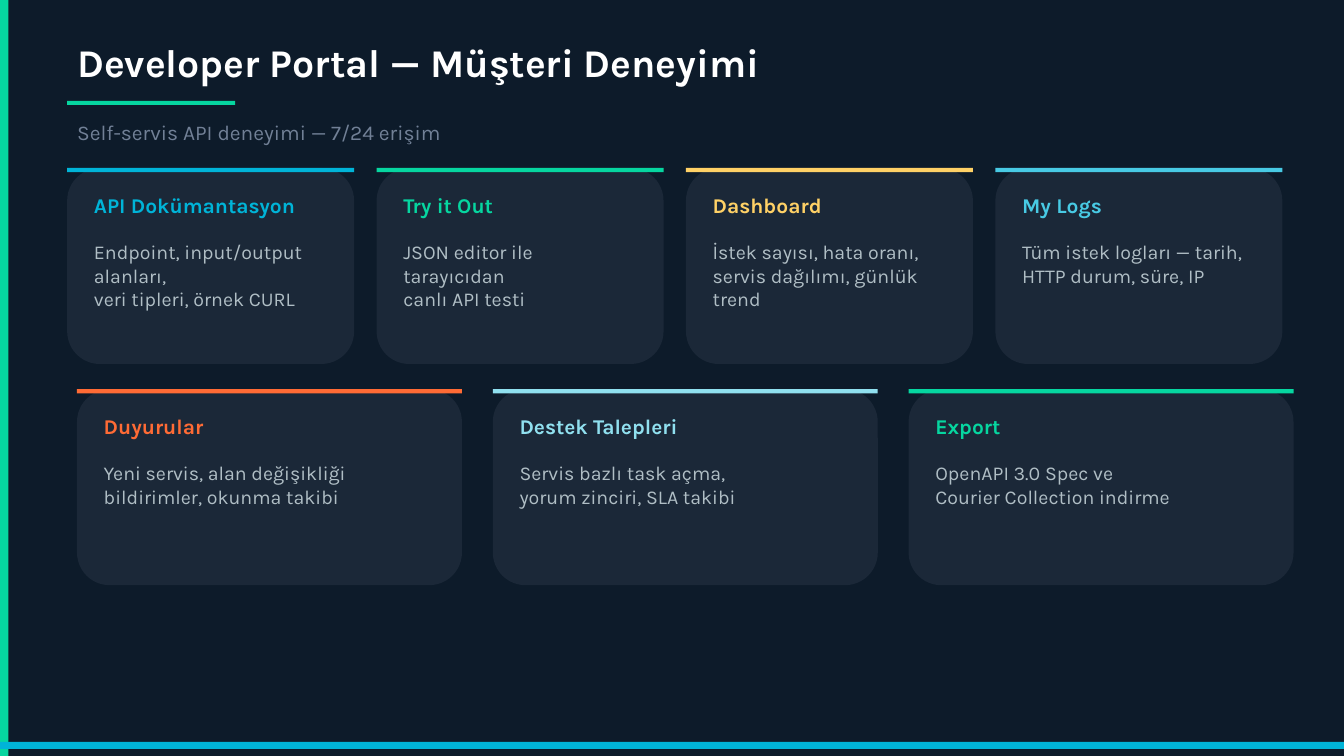
"""Builds the developer portal slide with two rows of feature cards."""
from pptx import Presentation
from pptx.dml.color import RGBColor
from pptx.enum.shapes import MSO_SHAPE as SHAPE
from pptx.enum.text import MSO_ANCHOR as ANCHOR, MSO_AUTO_SIZE as AUTO, PP_ALIGN as ALIGN
from pptx.util import Pt

FONT = "Karla"
NAVY = RGBColor(0x0D, 0x1B, 0x2A)
CARD = RGBColor(0x1B, 0x28, 0x38)
WHITE = RGBColor(0xFF, 0xFF, 0xFF)
SLATE = RGBColor(0x71, 0x80, 0x96)
SILVER = RGBColor(0xB0, 0xBE, 0xC5)
GREEN = RGBColor(0x06, 0xD6, 0xA0)
BLUE = RGBColor(0x00, 0xB4, 0xD8)
YELLOW = RGBColor(0xFF, 0xD1, 0x66)
SKY = RGBColor(0x48, 0xCA, 0xE4)
ORANGE = RGBColor(0xFF, 0x6B, 0x35)
PALE = RGBColor(0x90, 0xE0, 0xEF)

TITLE = "Developer Portal — Müşteri Deneyimi"
SUBTITLE = "Self-servis API deneyimi — 7/24 erişim"
TOP_CARDS = [
    ("API Dokümantasyon", BLUE,
     ["Endpoint, input/output alanları,", "veri tipleri, örnek CURL"]),
    ("Try it Out", GREEN, ["JSON editor ile tarayıcıdan", "canlı API testi"]),
    ("Dashboard", YELLOW,
     ["İstek sayısı, hata oranı,", "servis dağılımı, günlük trend"]),
    ("My Logs", SKY, ["Tüm istek logları — tarih,", "HTTP durum, süre, IP"]),
]
BOTTOM_CARDS = [
    ("Duyurular", ORANGE,
     ["Yeni servis, alan değişikliği", "bildirimler, okunma takibi"]),
    ("Destek Talepleri", PALE,
     ["Servis bazlı task açma,", "yorum zinciri, SLA takibi"]),
    ("Export", GREEN, ["OpenAPI 3.0 Spec ve", "Courier Collection indirme"]),
]
ROWS = [
    {"cards": TOP_CARDS, "x": 48, "y": 120, "w": 205, "gap": 16},
    {"cards": BOTTOM_CARDS, "x": 55, "y": 278, "w": 275, "gap": 22},
]
WIDTH, HEIGHT = 960, 540
CARD_H, STRIP_H, PAD = 140, 3, 12


def add_block(s, x, y, w, h, color, kind=SHAPE.RECTANGLE):
    sp = s.shapes.add_shape(kind, Pt(x), Pt(y), Pt(w), Pt(h))
    sp.shadow.inherit = False
    sp.fill.solid()
    sp.fill.fore_color.rgb = color
    sp.line.fill.background()


def write(sp, lines, size, color, bold=False):
    tf = sp.text_frame
    tf.word_wrap = True
    tf.auto_size = AUTO.NONE
    tf.vertical_anchor = ANCHOR.TOP
    p = tf.paragraphs[0]
    p.alignment = ALIGN.LEFT
    for i, line in enumerate(lines):
        if i:
            p.add_line_break()
        r = p.add_run()
        r.text = line
        r.font.name = FONT
        r.font.size = Pt(size)
        r.font.bold = bold
        r.font.color.rgb = color


def add_text(s, x, y, w, h, lines, size, color, bold=False):
    sp = s.shapes.add_textbox(Pt(x), Pt(y), Pt(w), Pt(h))
    write(sp, lines, size, color, bold)


def add_card(s, x, y, w, heading, color, lines):
    add_block(s, x, y, w, CARD_H, CARD, SHAPE.ROUNDED_RECTANGLE)
    add_block(s, x, y, w, STRIP_H, color)
    add_text(s, x + PAD, y + 14, w - 2 * PAD, 26, [heading], 15, color, True)
    add_text(s, x + PAD, y + 48, w - 2 * PAD, 80, lines, 14, SILVER)


def main():
    prs = Presentation()
    prs.slide_width, prs.slide_height = Pt(WIDTH), Pt(HEIGHT)
    s = prs.slides.add_slide(prs.slide_layouts[5])
    s.background.fill.solid()
    s.background.fill.fore_color.rgb = NAVY

    add_block(s, 0, 0, 6, HEIGHT, GREEN)
    title = s.shapes.title
    title.left, title.top, title.width, title.height = Pt(48), Pt(24), Pt(870), Pt(42)
    write(title, [TITLE], 28, WHITE, True)
    add_block(s, 48, 72, 120, STRIP_H, GREEN)
    add_text(s, 48, 82, 600, 26, [SUBTITLE], 15, SLATE)

    for row in ROWS:
        for i, (heading, color, lines) in enumerate(row["cards"]):
            x = row["x"] + i * (row["w"] + row["gap"])
            add_card(s, x, row["y"], row["w"], heading, color, lines)

    add_block(s, 0, 530, WIDTH, 5, BLUE)
    prs.save("out.pptx")


if __name__ == "__main__":
    main()
